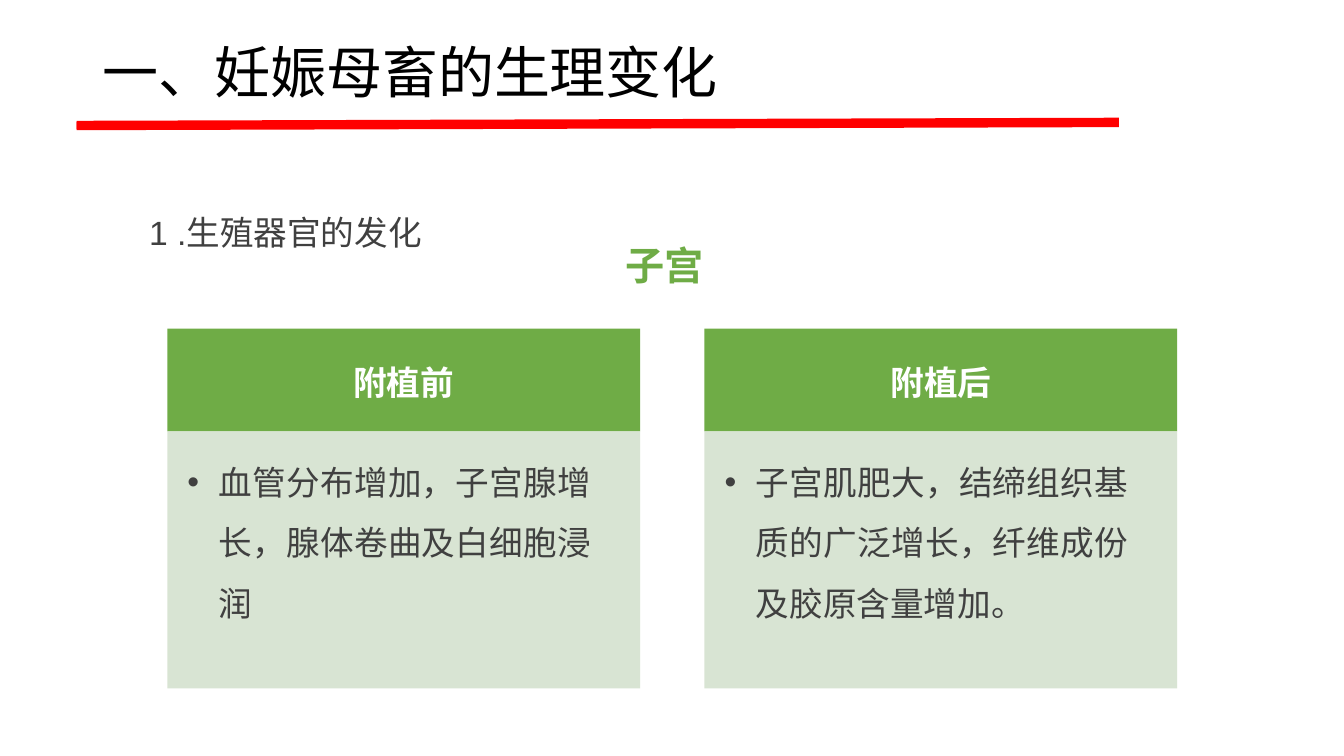
from lxml.etree import SubElement
from pptx import Presentation
from pptx.dml.color import RGBColor
from pptx.enum.shapes import MSO_CONNECTOR, MSO_SHAPE
from pptx.enum.text import MSO_ANCHOR, PP_ALIGN
from pptx.oxml.ns import qn
from pptx.util import Pt

HAN = "Noto Sans CJK SC"
GREEN, GREY = "6FAC46", "404040"


def paint(color, code):
    """Set a colour format from a hex string."""
    color.rgb = RGBColor.from_string(code)


def place(shape, left, top, width, height):
    """Move and size a shape in points."""
    shape.left, shape.top = Pt(left), Pt(top)
    shape.width, shape.height = Pt(width), Pt(height)


def write(shape, text, size=24, color=GREY, bold=False, latin=HAN,
          align=PP_ALIGN.LEFT, anchor=MSO_ANCHOR.TOP, space=1.0,
          inset=(0, 0, 0, 0), bullet=False):
    """Fill a shape with one formatted paragraph."""
    frame = shape.text_frame
    frame.word_wrap = True
    frame.vertical_anchor = anchor
    (frame.margin_left, frame.margin_top,
     frame.margin_right, frame.margin_bottom) = map(Pt, inset)
    para = frame.paragraphs[0]
    para.alignment, para.line_spacing = align, space
    if bullet:
        props = para._p.get_or_add_pPr()
        props.set("marL", str(Pt(36.7)))
        props.set("indent", str(Pt(-22.3)))
        SubElement(props, qn("a:buFont"), typeface="Arial")
        SubElement(props, qn("a:buChar"), char="•")
    run = para.add_run()
    run.text = text
    run.font.size, run.font.bold, run.font.name = Pt(size), bold, latin
    paint(run.font.color, color)
    SubElement(run._r.get_or_add_rPr(), qn("a:ea"), typeface=HAN)


def label(slide, text, box, **style):
    """Add a text box."""
    shape = slide.shapes.add_textbox(*map(Pt, box))
    write(shape, text, **style)


def panel(slide, text, box, fill, alpha=None, **style):
    """Add a filled rectangle with text."""
    shape = slide.shapes.add_shape(MSO_SHAPE.RECTANGLE, *map(Pt, box))
    shape.shadow.inherit = False
    shape.line.fill.background()
    shape.fill.solid()
    paint(shape.fill.fore_color, fill)
    if alpha:
        tint = shape._element.spPr.find(".//" + qn("a:srgbClr"))
        SubElement(tint, qn("a:alpha"), val=str(alpha * 1000))
    write(shape, text, **style)


def rule(slide, top):
    """Add a slightly rising red line."""
    line = slide.shapes.add_connector(
        MSO_CONNECTOR.STRAIGHT, Pt(54.7), Pt(top), Pt(799.2), Pt(top - 2.2))
    line.line.width = Pt(6)
    paint(line.line.color, "FF0000")
    SubElement(line._element.spPr, qn("a:effectLst"))


def card(slide, left, head, body):
    """Add a header panel over a bulleted panel."""
    panel(slide, head, (left, 234.7, 337.7, 73.5), GREEN, color="FFFFFF",
          bold=True, align=PP_ALIGN.CENTER, inset=(0, 23.6, 0, 0))
    panel(slide, body, (left, 308.2, 337.7, 183.5), "D4E2CF", alpha=90,
          align=PP_ALIGN.JUSTIFY, space=1.5, inset=(0, 7, 35, 0), bullet=True)


def main():
    """Build and save the slide."""
    deck = Presentation()
    deck.slide_width, deck.slide_height = Pt(960), Pt(540)
    slide = deck.slides.add_slide(deck.slide_layouts[5])
    for top in (89.3, 90):
        rule(slide, top)
    title = slide.shapes.title
    place(title, 66, 1.4, 828, 104.4)
    write(title, "一、妊娠母畜的生理变化", size=40, color="000000", space=0.9,
          anchor=MSO_ANCHOR.MIDDLE, inset=(7.2, 3.6, 7.2, 3.6))
    label(slide, "1 .生殖器官的发化", (105.1, 150.5, 229, 30),
          latin="Arial", inset=(1.4, 0.7, 0, 0))
    label(slide, "子宫", (41.8, 172, 460.8, 40), size=28, color=GREEN,
          bold=True, align=PP_ALIGN.RIGHT)
    cards = (("附植前", "血管分布增加，子宫腺增长，腺体卷曲及白细胞浸润"),
             ("附植后", "子宫肌肥大，结缔组织基质的广泛增长，纤维成份及胶原含量增加。"))
    for col, (head, body) in enumerate(cards):
        card(slide, 119.5 + col * 383.7, head, body)
    deck.save("out.pptx")


if __name__ == "__main__":
    main()
